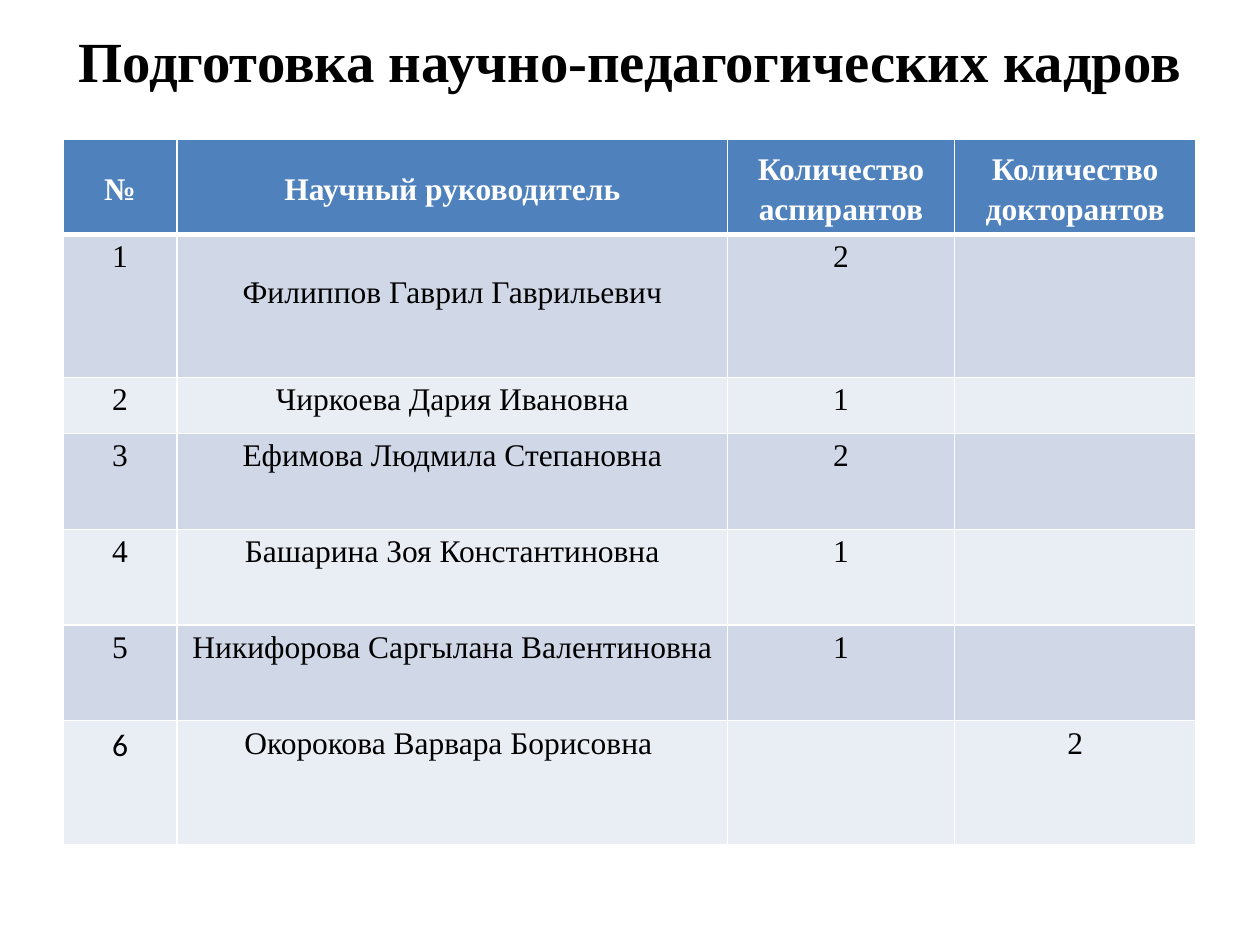
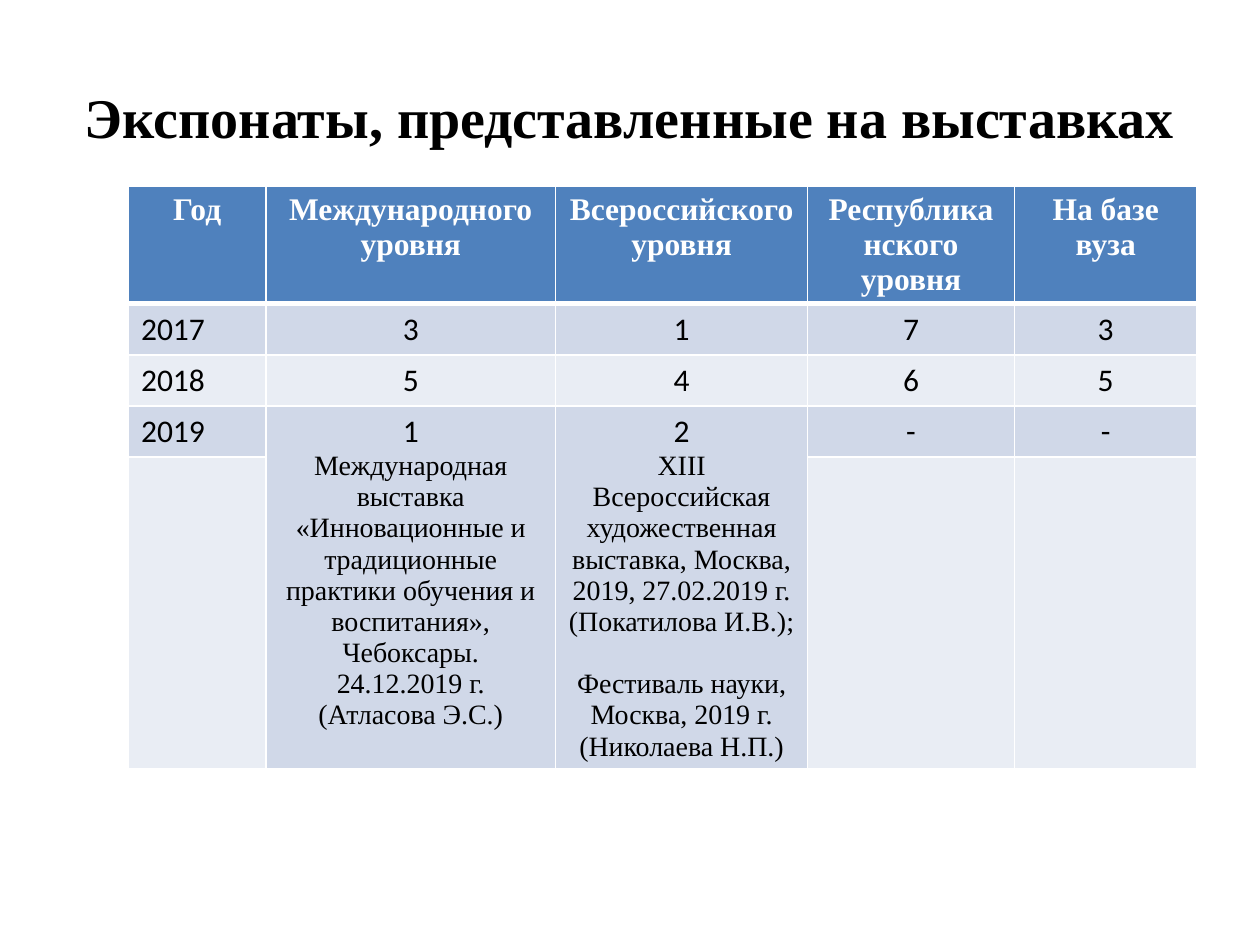
import pptx
import pptx.util
import pptx.dml.color
import pptx.enum.text
from lxml import etree
from pptx.oxml.ns import qn

Cm = pptx.util.Cm
Pt = pptx.util.Pt
RGBColor = pptx.dml.color.RGBColor
Anchor = pptx.enum.text.MSO_ANCHOR
Align = pptx.enum.text.PP_ALIGN

WHITE = RGBColor(0xFF, 0xFF, 0xFF)
BLACK = RGBColor(0, 0, 0)
HEADER_BLUE = RGBColor(0x4F, 0x81, 0xBD)
BAND_DARK = RGBColor(0xD0, 0xD8, 0xE8)
BAND_LIGHT = RGBColor(0xE9, 0xED, 0xF4)
SERIF = "Times New Roman"
SANS = "Calibri"

deck = pptx.Presentation()
deck.slide_width = Cm(25.4)
deck.slide_height = Cm(19.05)


def format_text(paragraph, font, size, color, bold=False):
    paragraph.alignment = Align.CENTER
    for span in paragraph.runs:
        span.font.name = font
        span.font.size = Pt(size)
        span.font.color.rgb = color
        span.font.bold = bold


def add_table_page(heading, heading_size, heading_box, corner, widths, heights, rows, body_font):
    """Add a page with a title and a banded table; return the table."""
    page = deck.slides.add_slide(deck.slide_layouts[5])
    title = page.shapes.title
    title.left, title.top, title.width, title.height = [Cm(value) for value in heading_box]
    title.text_frame.text = heading
    title.text_frame.auto_size = pptx.enum.text.MSO_AUTO_SIZE.NONE
    title.text_frame.vertical_anchor = Anchor.MIDDLE
    format_text(title.text_frame.paragraphs[0], SERIF, heading_size, BLACK, True)

    table = page.shapes.add_table(
        len(rows), len(widths), Cm(corner[0]), Cm(corner[1]),
        Cm(sum(widths)), Cm(sum(heights))).table
    for column, width in zip(table.columns, widths):
        column.width = Cm(width)
    for row_index, texts in enumerate(rows):
        table.rows[row_index].height = Cm(heights[row_index])
        is_header = row_index == 0
        for column_index, text in enumerate(texts):
            cell = table.cell(row_index, column_index)
            properties = cell._tc.get_or_add_tcPr()
            for side in ("lnL", "lnR", "lnT", "lnB"):
                thickness = Pt(3) if is_header and side == "lnB" else Pt(1)
                line = etree.SubElement(properties, qn("a:" + side), w=str(thickness))
                fill = etree.SubElement(line, qn("a:solidFill"))
                etree.SubElement(fill, qn("a:srgbClr"), val=str(WHITE))
            cell.fill.solid()
            if is_header:
                cell.fill.fore_color.rgb = HEADER_BLUE
            else:
                cell.fill.fore_color.rgb = BAND_DARK if row_index % 2 else BAND_LIGHT
            cell.text_frame.text = text
            for paragraph in cell.text_frame.paragraphs:
                if is_header:
                    format_text(paragraph, SERIF, 18, WHITE, True)
                else:
                    format_text(paragraph, body_font, 18, BLACK)
    return table


# Slide 1: supervisors and their students
supervisors = add_table_page(
    "Подготовка научно-педагогических кадров", 32.4, (1.27, 0.4, 22.86, 1.6),
    (1.27, 2.8), (2.3, 11.1, 4.57, 4.87), (1.93, 2.88, 1.13, 1.93, 1.93, 1.93, 2.5),
    [
        ("№", "Научный руководитель", "Количество аспирантов", "Количество докторантов"),
        ("1", "Филиппов Гаврил Гаврильевич", "2", ""),
        ("2", "Чиркоева Дария Ивановна", "1", ""),
        ("3", "Ефимова Людмила Степановна", "2", ""),
        ("4", "Башарина Зоя Константиновна", "1", ""),
        ("5", "Никифорова Саргылана Валентиновна", "1", ""),
        ("6", "Окорокова Варвара Борисовна ", "", "2"),
    ], SERIF)
for cell in supervisors.iter_cells():
    cell.margin_left = cell.margin_right = Cm(0.18)
    cell.margin_top = cell.margin_bottom = 0
    cell.text_frame.paragraphs[0].line_spacing = 1.15
for column_index in range(4):
    supervisors.cell(0, column_index).vertical_anchor = Anchor.MIDDLE
supervisors.cell(1, 1).margin_top = Cm(0.71)
format_text(supervisors.cell(6, 0).text_frame.paragraphs[0], SANS, 18, BLACK)

# Slide 2: exhibits by year and level
exhibits = add_table_page(
    "Экспонаты, представленные на выставках", 32, (1.27, 0.76, 22.86, 3.18),
    (2.59, 3.76), (2.77, 5.84, 5.08, 4.17, 3.68), (2.34, 1.03, 1.03, 1.03, 6.27),
    [
        ("Год", "Международного уровня", "Всероссийского уровня",
         "Республиканского уровня", "На базе вуза"),
        ("2017", "3", "1", "7", "3"),
        ("2018", "5", "4", "6", "5"),
        ("2019",
         "1\nМеждународная выставка «Инновационные и традиционные практики обучения "
         "и воспитания», Чебоксары. 24.12.2019 г. (Атласова Э.С.)",
         "2\nXIII Всероссийская художественная выставка, Москва, 2019, 27.02.2019 г."
         "(Покатилова И.В.);\nФестиваль науки, Москва, 2019 г. (Николаева Н.П.)",
         "-", "-"),
        ("", "", "", "", ""),
    ], SANS)
for row_index in range(1, 4):
    exhibits.cell(row_index, 0).text_frame.paragraphs[0].alignment = Align.LEFT
for column_index in (1, 2):
    cell = exhibits.cell(3, column_index)
    cell.merge(exhibits.cell(4, column_index))
    for paragraph in cell.text_frame.paragraphs[1:]:
        format_text(paragraph, SERIF, 16, BLACK)
exhibits.cell(3, 2).text_frame.paragraphs[2].space_before = Pt(18)

deck.save("out.pptx")
